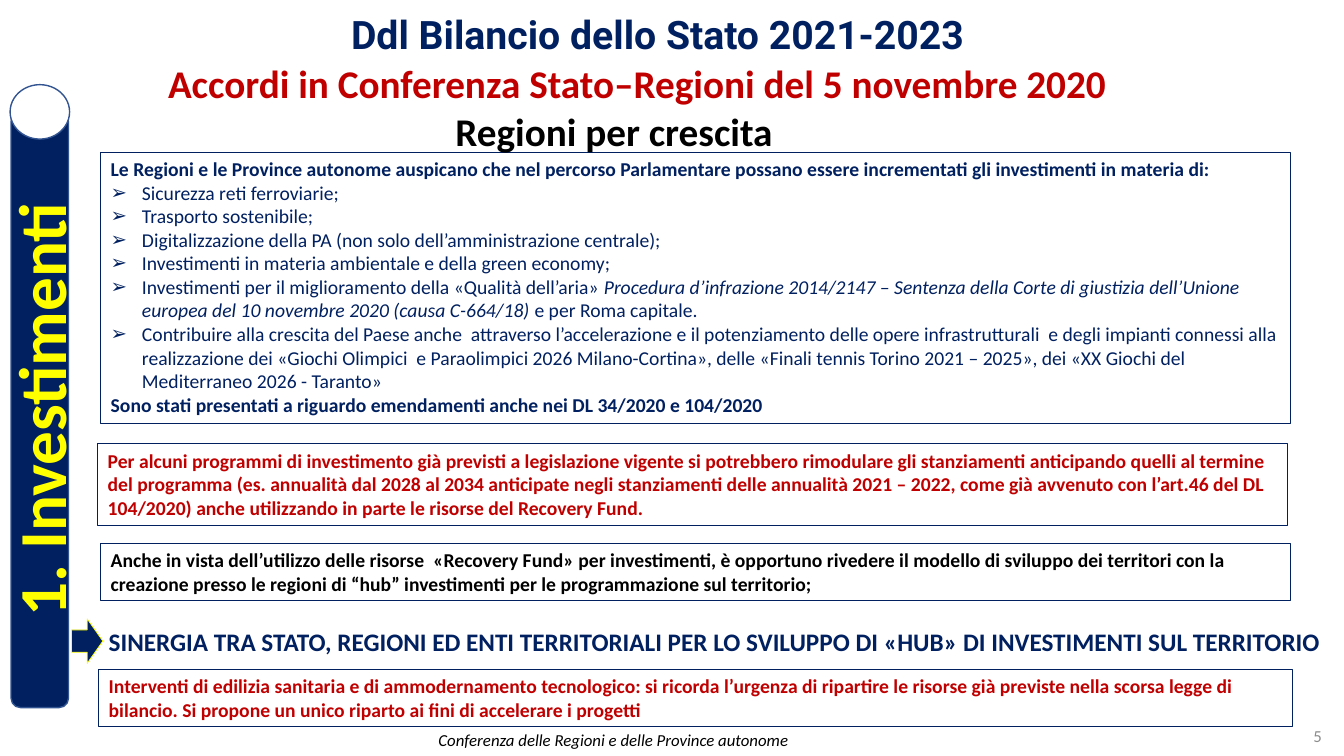
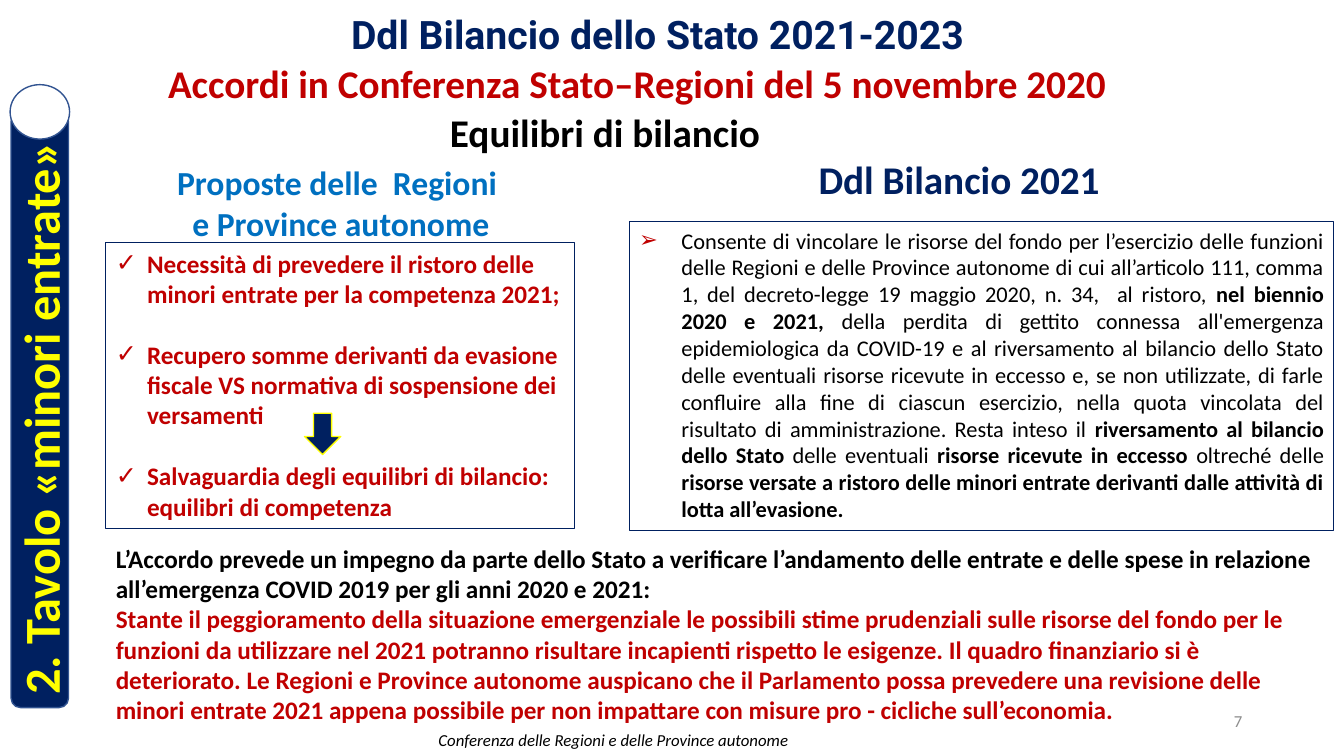
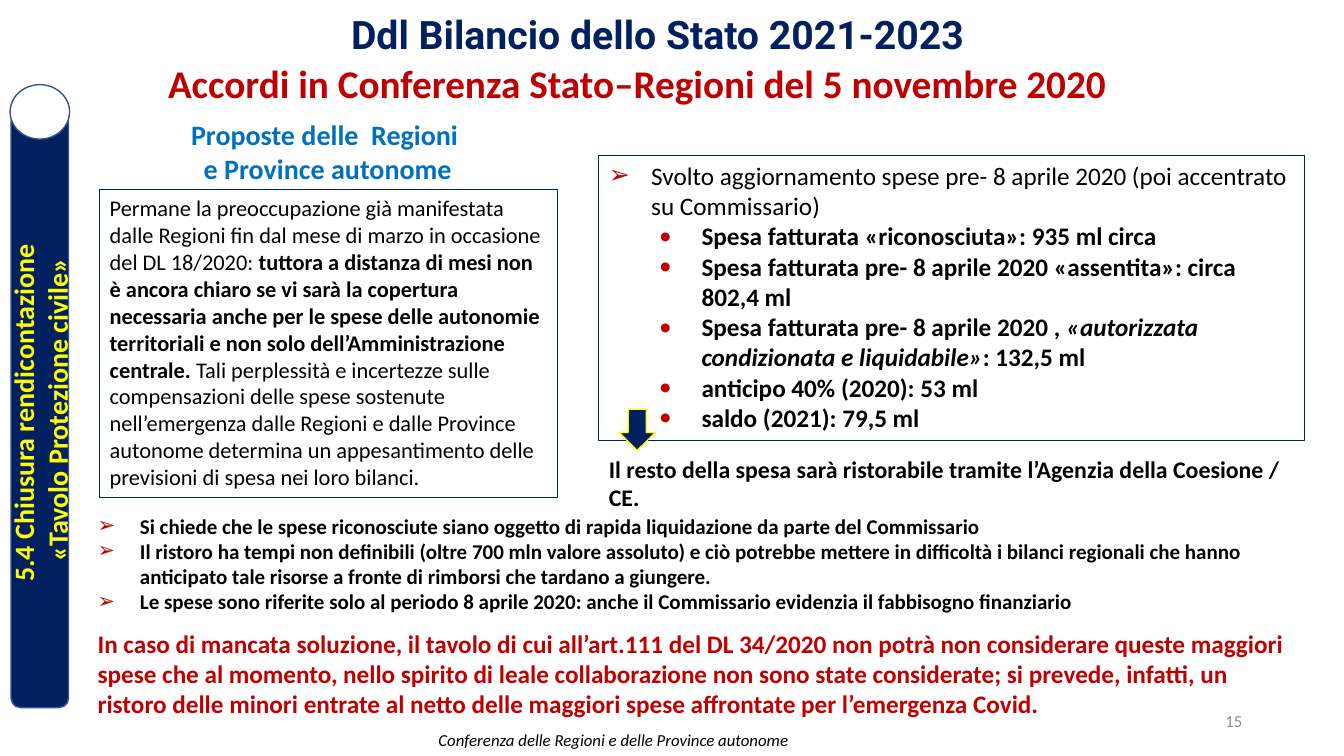
"""Build three slides on the 2021-2023 State budget and the State-Regions agreements."""
from dataclasses import dataclass

from lxml.etree import SubElement
from pptx import Presentation
from pptx.dml.color import RGBColor
from pptx.enum.shapes import MSO_SHAPE
from pptx.enum.text import MSO_ANCHOR, MSO_AUTO_SIZE, PP_ALIGN
from pptx.oxml.ns import qn
from pptx.util import Inches, Pt

COLORS = {
    "navy": "002060", "red": "C00000", "blue": "0070C0", "yellow": "FFFF00",
    "edge": "325491", "black": "000000", "white": "FFFFFF", "gray": "8C8C8C",
}
BULLETS = {
    "arrow": ("➢", 0.31, 0.31, None),
    "check": ("✓", 0.31, 0.31, None),
    "red arrow": ("➢", 0.42, 0.42, "red"),
    "red dot": ("•", 0.92, 0.42, "red"),
}
LEFT, CENTER, RIGHT, JUSTIFY = PP_ALIGN.LEFT, PP_ALIGN.CENTER, PP_ALIGN.RIGHT, PP_ALIGN.JUSTIFY


@dataclass
class Item:
    """Paragraph made of plain text or (text, flags) runs, with its own formatting."""
    runs: object
    bullet: str = ""
    color: str = ""
    bold: object = None
    before: float = 0


@dataclass
class Box:
    """Text block with a position, a base font and an optional frame."""
    at: tuple
    size: float
    color: str
    items: list
    bold: bool = True
    align: object = LEFT
    framed: bool = False
    font: str = "Calibri"


def bulleted(kind, texts, **options):
    return [Item(text, kind, **options) for text in texts]


def proposals(at, size):
    return Box(at, size, "blue", [Item("Proposte delle  Regioni "), Item("e Province autonome")], align=CENTER)


def topic(left, top, text):
    return Box((left, top, 6.66, 0.57), 28, "black", [Item(text)], align=CENTER)


HEADINGS = [
    Box((2.02, 0.05, 9, 0.52), 28, "navy", [Item("Ddl Bilancio dello Stato 2021-2023")],
        align=CENTER, font="Roboto"),
    Box((1.29, 0.54, 10.05, 0.57), 28, "red",
        [Item("Accordi in Conferenza Stato–Regioni del 5 novembre 2020")], align=CENTER),
]
FOOTER = "Conferenza delle Regioni e delle Province autonome"

INVESTMENTS = [
    Item("Le Regioni e le Province autonome auspicano che nel percorso Parlamentare possano essere "
         "incrementati gli investimenti in materia di:"),
    *bulleted("arrow", [
        "Sicurezza reti ferroviarie;",
        "Trasporto sostenibile;",
        "Digitalizzazione della PA (non solo dell’amministrazione centrale);",
        "Investimenti in materia ambientale e della green economy;",
        [("Investimenti per il miglioramento della «Qualità dell’aria» ", ""),
         ("Procedura d’infrazione 2014/2147 – Sentenza della Corte di giustizia dell’Unione europea "
          "del 10 novembre 2020 (causa C-664/18)", "i"),
         (" e per Roma capitale.", "")],
        "Contribuire alla crescita del Paese anche  attraverso l’accelerazione e il potenziamento delle "
        "opere infrastrutturali  e degli impianti connessi alla realizzazione dei «Giochi Olimpici  e "
        "Paraolimpici 2026 Milano-Cortina», delle «Finali tennis Torino 2021 – 2025», dei «XX Giochi del "
        "Mediterraneo 2026 - Taranto»",
    ], bold=False),
    Item("Sono stati presentati a riguardo emendamenti anche nei DL 34/2020 e 104/2020"),
]
REVENUE_RULE = [
    ("Consente di vincolare le risorse del fondo per l’esercizio delle funzioni delle Regioni e delle "
     "Province autonome di cui all’articolo 111, comma 1, del decreto-legge 19 maggio 2020, n. 34,  "
     "al ristoro, ", ""),
    ("nel biennio 2020 e 2021, ", "b"),
    ("della perdita di gettito connessa all'emergenza epidemiologica da COVID-19 e al riversamento al "
     "bilancio dello Stato delle eventuali risorse ricevute in eccesso e, se non utilizzate, di farle "
     "confluire alla fine di ciascun esercizio, nella quota vincolata del risultato di amministrazione. "
     "Resta inteso il ", ""),
    ("riversamento al bilancio dello Stato ", "b"),
    ("delle eventuali ", ""),
    ("risorse ricevute in eccesso ", "b"),
    ("oltreché delle ", ""),
    ("risorse versate a ristoro delle minori entrate derivanti dalle attività di lotta all’evasione.", "b"),
]
CONCERN = [
    ("Permane la preoccupazione già manifestata dalle Regioni fin dal mese di marzo in occasione del "
     "DL 18/2020: ", ""),
    ("tuttora a distanza di mesi non è ancora chiaro se vi sarà la copertura necessaria anche per le "
     "spese delle autonomie territoriali e non solo dell’Amministrazione centrale. ", "b"),
    ("Tali perplessità e incertezze sulle compensazioni delle spese sostenute nell’emergenza dalle "
     "Regioni e dalle Province autonome determina un appesantimento delle previsioni di spesa nei loro "
     "bilanci.", ""),
]

SLIDES = [
    {
        "band": (["1. Investimenti"], 48, CENTER),
        "number": ("5", 10.21, 7.1),
        "arrow": (MSO_SHAPE.RIGHT_ARROW, (0.71, 6.14, 0.31, 0.44), 0.5),
        "boxes": [
            Box((1, 5.39, 11.8, 0.57), 14, "black", [Item(
                "Anche in vista dell’utilizzo delle risorse  «Recovery Fund» per investimenti, è opportuno "
                "rivedere il modello di sviluppo dei territori con la creazione presso le regioni di “hub” "
                "investimenti per le programmazione sul territorio;")], framed=True),
            Box((1, 1.51, 11.8, 2.69), 14, "navy", INVESTMENTS, framed=True),
            Box((0.97, 4.4, 11.8, 0.81), 14, "red", [Item(
                "Per alcuni programmi di investimento già previsti a legislazione vigente si potrebbero "
                "rimodulare gli stanziamenti anticipando quelli al termine del programma (es. annualità dal "
                "2028 al 2034 anticipate negli stanziamenti delle annualità 2021 – 2022, come già avvenuto "
                "con l’art.46 del DL 104/2020) anche utilizzando in parte le risorse del Recovery Fund.")],
                framed=True),
            Box((0.98, 6.64, 11.84, 0.57), 14, "red", [Item(
                "Interventi di edilizia sanitaria e di ammodernamento tecnologico: si ricorda l’urgenza di "
                "ripartire le risorse già previste nella scorsa legge di bilancio. Si propone un unico "
                "riparto ai fini di accelerare i progetti")], framed=True),
            Box((0.98, 6.16, 12.35, 0.4), 18, "navy", [Item(
                "SINERGIA TRA STATO, REGIONI ED ENTI TERRITORIALI PER LO SVILUPPO DI «HUB» DI INVESTIMENTI "
                "SUL TERRITORIO")]),
            topic(2.76, 1.02, "Regioni per crescita"),
        ],
    },
    {
        "band": (["2. Tavolo «minori entrate»"], 36, LEFT),
        "number": ("7", 9.42, 6.95),
        "arrow": (MSO_SHAPE.DOWN_ARROW, (3.02, 4.1, 0.36, 0.41), 1),
        "boxes": [
            proposals((0.32, 1.56, 6.12, 0.91), 24),
            Box((8.02, 1.49, 4.15, 0.57), 28, "navy", [Item("Ddl Bilancio 2021")]),
            Box((6.24, 2.2, 6.99, 3.06), 16, "black", [Item(REVENUE_RULE, "red arrow")],
                bold=False, align=JUSTIFY, framed=True),
            Box((1.05, 2.41, 4.65, 2.83), 18, "red", bulleted("check", [
                "Necessità di prevedere il ristoro delle minori entrate per la competenza 2021;",
                "Recupero somme derivanti da evasione fiscale VS normativa di sospensione dei versamenti",
                "Salvaguardia degli equilibri di bilancio: equilibri di competenza",
            ], before=22), framed=True),
            Box((1.05, 5.34, 12.1, 1.92), 18, "black", [
                Item("L’Accordo prevede un impegno da parte dello Stato a verificare l’andamento delle "
                     "entrate e delle spese in relazione all’emergenza COVID 2019 per gli anni 2020 e 2021:"),
                Item("Stante il peggioramento della situazione emergenziale le possibili stime prudenziali "
                     "sulle risorse del fondo per le funzioni da utilizzare nel 2021 potranno risultare "
                     "incapienti rispetto le esigenze. Il quadro finanziario si è deteriorato. Le Regioni e "
                     "Province autonome auspicano che il Parlamento possa prevedere una revisione delle "
                     "minori entrate 2021 appena possibile per non impattare con misure pro - cicliche "
                     "sull’economia.", color="red")]),
            topic(2.67, 1.03, "Equilibri di bilancio"),
        ],
    },
    {
        "band": (["5.4 Chiusura rendicontazione ", "«Tavolo Protezione civile»"], 20, CENTER),
        "number": ("15", 9.42, 6.95),
        "arrow": (MSO_SHAPE.DOWN_ARROW, (6.14, 4.06, 0.36, 0.41), 1),
        "boxes": [
            proposals((0.19, 1.12, 6.12, 0.77), 20),
            Box((0.99, 1.88, 4.54, 3.06), 16, "black", [Item(CONCERN)], bold=False, framed=True),
            Box((5.94, 1.54, 7, 2.83), 18, "black", [
                Item("Svolto aggiornamento spese pre- 8 aprile 2020 (poi accentrato su Commissario)",
                     "red arrow", bold=False),
                *bulleted("red dot", [
                    "Spesa fatturata «riconosciuta»: 935 ml circa",
                    "Spesa fatturata pre- 8 aprile 2020 «assentita»: circa 802,4 ml",
                    [("Spesa fatturata pre- 8 aprile 2020 , ", ""),
                     ("«autorizzata condizionata e liquidabile»", "i"), (": 132,5 ml", "")],
                    "anticipo 40% (2020): 53 ml",
                    "saldo (2021): 79,5 ml",
                ])], framed=True),
            Box((0.87, 6.18, 11.97, 1.01), 18, "red", [Item(
                "In caso di mancata soluzione, il tavolo di cui all’art.111 del DL 34/2020 non potrà non "
                "considerare queste maggiori spese che al momento, nello spirito di leale collaborazione "
                "non sono state considerate; si prevede, infatti, un ristoro delle minori entrate al netto "
                "delle maggiori spese affrontate per l’emergenza Covid.")]),
            Box((0.87, 5.04, 12.34, 1.11), 15, "black", bulleted("red arrow", [
                "Si chiede che le spese riconosciute siano oggetto di rapida liquidazione da parte del "
                "Commissario",
                "Il ristoro ha tempi non definibili (oltre 700 mln valore assoluto) e ciò potrebbe mettere "
                "in difficoltà i bilanci regionali che hanno anticipato tale risorse a fronte di rimborsi "
                "che tardano a giungere.",
                "Le spese sono riferite solo al periodo 8 aprile 2020: anche il Commissario evidenzia il "
                "fabbisogno finanziario",
            ])),
            Box((5.94, 4.46, 7.2, 0.39), 17, "black", [Item(
                "Il resto della spesa sarà ristorabile tramite l’Agenzia della Coesione / CE.")]),
        ],
    },
]


def rgb(name):
    return RGBColor.from_string(COLORS[name])


def add_shape(slide, kind, at, fill=None, line=None, width=1):
    shape = slide.shapes.add_shape(kind, *map(Inches, at))
    shape.shadow.inherit = False
    if fill:
        shape.fill.solid()
        shape.fill.fore_color.rgb = rgb(fill)
    else:
        shape.fill.background()
    if line:
        shape.line.color.rgb = rgb(line)
        shape.line.width = Pt(width)
    else:
        shape.line.fill.background()
    return shape


def set_bullet(paragraph, kind):
    character, margin, hanging, color = BULLETS[kind]
    properties = paragraph._p.get_or_add_pPr()
    properties.set("marL", str(Inches(margin)))
    properties.set("indent", str(-Inches(hanging)))
    if color:
        SubElement(SubElement(properties, qn("a:buClr")), qn("a:srgbClr"), val=COLORS[color])
    SubElement(properties, qn("a:buFont"), typeface="Calibri")
    SubElement(properties, qn("a:buChar"), char=character)


def write(shape, box, italic=False, anchor=MSO_ANCHOR.TOP):
    frame = shape.text_frame
    frame.word_wrap = True
    frame.vertical_anchor = anchor
    for index, item in enumerate(box.items):
        paragraph = frame.add_paragraph() if index else frame.paragraphs[0]
        if item.bullet:
            set_bullet(paragraph, item.bullet)
        paragraph.level = 1 if item.bullet == "red dot" else 0
        paragraph.alignment = box.align
        if index and item.before:
            paragraph.space_before = Pt(item.before)
        font = paragraph.font
        font.name, font.size, font.italic = box.font, Pt(box.size), italic
        font.bold = box.bold if item.bold is None else item.bold
        font.color.rgb = rgb(item.color or box.color)
        runs = [(item.runs, "")] if isinstance(item.runs, str) else item.runs
        for text, flags in runs:
            run = paragraph.add_run()
            run.text = text
            if "b" in flags:
                run.font.bold = True
            if "i" in flags:
                run.font.italic = True


def add_box(slide, box):
    if box.framed:
        shape = add_shape(slide, MSO_SHAPE.RECTANGLE, box.at, line="navy", width=0.75)
    else:
        shape = slide.shapes.add_textbox(*map(Inches, box.at))
    write(shape, box)
    shape.text_frame.auto_size = MSO_AUTO_SIZE.SHAPE_TO_FIT_TEXT


def add_common_parts(slide, band, number):
    footer = Box((3.48, 7.23, 5.21, 0.22), 12, "black", [Item(FOOTER)], bold=False, align=CENTER)
    write(add_shape(slide, MSO_SHAPE.RECTANGLE, footer.at, "white"), footer, True, MSO_ANCHOR.MIDDLE)
    for heading in HEADINGS:
        add_box(slide, heading)

    lines, size, align = band
    label = Box((-2.56, 3.78, 5.91, 0.57), size, "yellow", [Item(line) for line in lines], align=align)
    strip = add_shape(slide, MSO_SHAPE.ROUNDED_RECTANGLE, label.at, "navy", "edge")
    strip.rotation = 270
    write(strip, label, anchor=MSO_ANCHOR.MIDDLE)
    add_shape(slide, MSO_SHAPE.FLOWCHART_CONNECTOR, (0.1, 0.84, 0.59, 0.54), "white", "edge")

    text, left, top = number
    page = Box((left, top, 3, 0.4), 12, "gray", [Item(text)], bold=False, align=RIGHT)
    write(slide.shapes.add_textbox(*map(Inches, page.at)), page, anchor=MSO_ANCHOR.MIDDLE)


def main():
    presentation = Presentation()
    presentation.slide_width, presentation.slide_height = Inches(13.33), Inches(7.5)
    for content in SLIDES:
        slide = presentation.slides.add_slide(presentation.slide_layouts[6])
        add_common_parts(slide, content["band"], content["number"])
        for box in content["boxes"]:
            add_box(slide, box)
        kind, at, width = content["arrow"]
        add_shape(slide, kind, at, "navy", "yellow", width)
    presentation.save("out.pptx")


if __name__ == "__main__":
    main()
